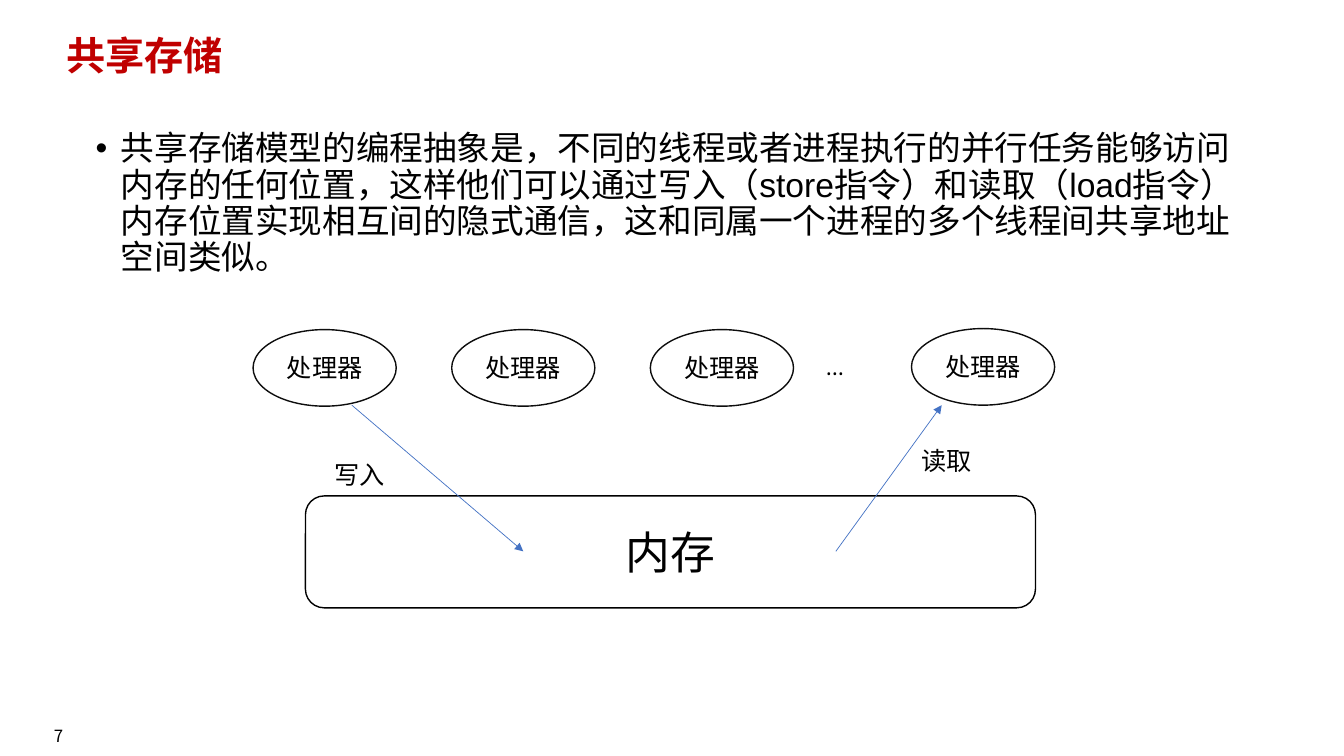
"""Builds a slide on the shared-memory programming model."""
from lxml import etree
from pptx import Presentation
from pptx import util as u
from pptx.dml.color import RGBColor
from pptx.enum import lang, shapes, text
from pptx.oxml import ns

BLACK = RGBColor(0x00, 0x00, 0x00)
INK = RGBColor(0x0D, 0x0D, 0x0D)
WHITE = RGBColor(0xFF, 0xFF, 0xFF)
RED = RGBColor(0xC0, 0x00, 0x00)
BLUE = RGBColor(0x44, 0x72, 0xC4)
SANS = "Noto Sans CJK SC"
SUMMARY = (
    "共享存储模型的编程抽象是，不同的线程或者进程执行的并行任务能够访问"
    "内存的任何位置，这样他们可以通过写入（store指令）和读取（load指令）"
    "内存位置实现相互间的隐式通信，这和同属一个进程的多个线程间共享地址空间类似。"
)


def add_child(parent, tag, **attrs):
    """Append a DrawingML element to a parent."""
    return etree.SubElement(parent, ns.qn(tag), **attrs)


def write(sp, content, size=18, font=SANS, east=SANS, color=BLACK, bold=False,
          align=text.PP_ALIGN.LEFT, anchor=text.MSO_ANCHOR.TOP, spacing=None):
    """Put one formatted paragraph into a shape and return it."""
    tf = sp.text_frame
    tf.word_wrap = True
    tf.auto_size = text.MSO_AUTO_SIZE.NONE
    tf.vertical_anchor = anchor
    p = tf.paragraphs[0]
    p.alignment = align
    p.line_spacing = spacing
    r = p.add_run()
    r.text = content
    r.font.size = u.Pt(size)
    r.font.bold = bold
    r.font.color.rgb = color
    r.font.name = font
    r.font.language_id = lang.MSO_LANGUAGE_ID.SIMPLIFIED_CHINESE
    add_child(r.font._element, "a:ea", typeface=east)
    return p


def add_label(slide, content, x, y, w, h, **fmt):
    """Add a text box and return its paragraph."""
    box = slide.shapes.add_textbox(*map(u.Inches, (x, y, w, h)))
    return write(box, content, **fmt)


def add_node(slide, kind, content, x, y, w, h, line=BLACK, size=18):
    """Add a white outlined shape with centred text."""
    sp = slide.shapes.add_shape(kind, *map(u.Inches, (x, y, w, h)))
    sp.shadow.inherit = False
    sp.fill.solid()
    sp.fill.fore_color.rgb = WHITE
    sp.line.color.rgb = line
    sp.line.width = u.Pt(1)
    write(sp, content, size=size, align=text.PP_ALIGN.CENTER,
          anchor=text.MSO_ANCHOR.MIDDLE)


def add_arrow(slide, x1, y1, x2, y2):
    """Add a thin blue arrow between two points."""
    c = slide.shapes.add_connector(shapes.MSO_CONNECTOR.STRAIGHT,
                                   *map(u.Inches, (x1, y1, x2, y2)))
    c.line.color.rgb = BLUE
    c.line.width = u.Pt(0.5)
    add_child(c.line._get_or_add_ln(), "a:tailEnd", type="triangle")
    add_child(c._element.spPr, "a:effectLst")


def add_title(slide, x, y, w, h):
    """Place and format the title placeholder."""
    sp = slide.shapes.title
    sp.left, sp.top, sp.width, sp.height = map(u.Inches, (x, y, w, h))
    write(sp, "共享存储", size=28, color=RED, bold=True, spacing=0.9)


def add_summary(slide, x, y, w, h):
    """Add the bulleted description."""
    p = add_label(slide, SUMMARY, x, y, w, h, size=24, font="Arial", spacing=0.9)
    p.space_before = u.Pt(10)
    pPr = p._p.get_or_add_pPr()
    pPr.set("marL", str(u.Inches(0.25)))
    pPr.set("indent", str(u.Inches(-0.25)))
    add_child(pPr, "a:buFont", typeface="Arial")
    add_child(pPr, "a:buChar", char="•")


def add_memory_diagram(slide, x, y):
    """Draw processors writing to and reading from a shared memory."""
    step, w, h = 1.97, 1.42, 0.76
    spots = [(i * step, 0.01) for i in range(3)] + [(6.53, 0)]
    for dx, dy in spots:
        add_node(slide, shapes.MSO_SHAPE.OVAL, "处理器",
                 x + dx, y + dy, w, h, line=INK)
    add_node(slide, shapes.MSO_SHAPE.ROUNDED_RECTANGLE, "内存",
             x + 0.52, y + 1.66, 7.24, 1.11, size=32)
    add_label(slide, "…", x + 5.57, y + 0.17, 0.96, 0.4,
              font="Cambria", east="Cambria")
    top, bottom = y + h, y + 2.21
    add_arrow(slide, x + 0.98, top, x + 2.68, bottom)
    add_arrow(slide, x + 5.78, bottom, x + 6.83, top)
    add_label(slide, "写入", x + 0.71, y + 1.25, 1.05, 0.4)
    add_label(slide, "读取", x + 6.53, y + 1.11, 1.22, 0.4)


def add_page_number(slide, x, y, w, h):
    """Add the page number."""
    add_label(slide, "7", x, y, w, h, size=12, align=text.PP_ALIGN.CENTER,
              anchor=text.MSO_ANCHOR.MIDDLE)


def main():
    """Build and save the presentation."""
    prs = Presentation()
    prs.slide_width, prs.slide_height = u.Inches(13.33), u.Inches(7.5)
    slide = prs.slides.add_slide(prs.slide_layouts[5])
    add_page_number(slide, 0, 7.1, 1.16, 0.4)
    add_title(slide, 0.56, 0.31, 11.5, 0.65)
    add_summary(slide, 0.85, 1.26, 11.5, 1.6)
    add_memory_diagram(slide, 2.51, 3.26)
    prs.save("out.pptx")


if __name__ == "__main__":
    main()
